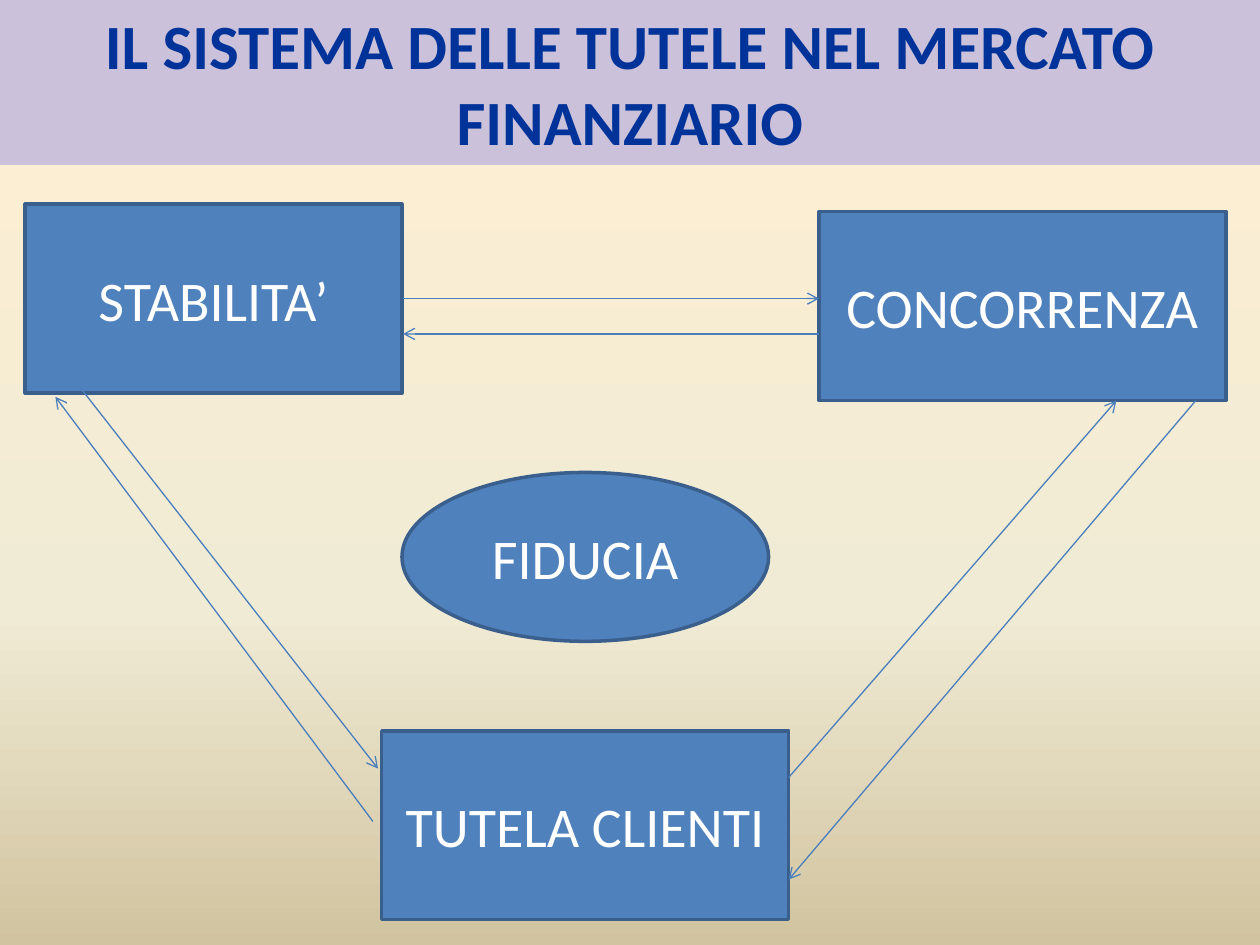
from lxml import etree
from pptx import Presentation
from pptx.dml.color import RGBColor
from pptx.enum.shapes import MSO_CONNECTOR, MSO_SHAPE
from pptx.enum.text import MSO_ANCHOR, PP_ALIGN
from pptx.oxml.ns import qn
from pptx.util import Inches, Pt

RECTANGLE, OVAL = MSO_SHAPE.RECTANGLE, MSO_SHAPE.OVAL
STRAIGHT = MSO_CONNECTOR.STRAIGHT
MIDDLE, CENTER = MSO_ANCHOR.MIDDLE, PP_ALIGN.CENTER

WIDTH, HEIGHT = 10, 7.5
FONT = "Calibri"
BOX_FILL, BOX_LINE, ARROW_COLOR = "4F81BD", "3A5F8C", "4B7EBC"
BACKGROUND = [(0, "FFEFD1"), (65, "F0EBD5"), (100, "D1C39F")]

TITLE = "IL SISTEMA DELLE TUTELE NEL MERCATO FINANZIARIO"
BOX_HEIGHT, WIDE = 1.5, 3.23

# text, shape, (left, top, width, height)
NODES = [
    ("FIDUCIA", OVAL, (3.19, 3.75, 2.91, 1.34)),
    ("STABILITA’", RECTANGLE, (0.2, 1.62, 2.99, BOX_HEIGHT)),
    ("CONCORRENZA", RECTANGLE, (6.5, 1.68, WIDE, BOX_HEIGHT)),
    ("TUTELA CLIENTI", RECTANGLE, (3.03, 5.8, WIDE, BOX_HEIGHT)),
]

# start and end; the head is at the end
ARROWS = [
    ((3.2, 2.37), (6.5, 2.37)),    # stability to competition
    ((6.5, 2.65), (3.2, 2.65)),    # and back
    ((0.64, 3.08), (3, 6.1)),      # stability to client protection
    ((2.96, 6.52), (0.44, 3.15)),  # and back
    ((9.49, 3.18), (6.26, 6.98)),  # competition to client protection
    ((6.26, 6.17), (8.86, 3.18)),  # and back
]


def color(value):
    return RGBColor.from_string(value)


def paint_background(slide):
    fill = slide.background.fill
    fill.gradient()
    fill.gradient_angle = 270  # counter-clockwise: top to bottom
    stops = slide.background._cSld.find(".//" + qn("a:gsLst"))
    for stop in list(stops):
        stops.remove(stop)
    for percent, value in BACKGROUND:
        stop = etree.SubElement(stops, qn("a:gs"), pos=str(percent * 1000))
        etree.SubElement(stop, qn("a:srgbClr"), val=value)


def add_box(slide, text, kind, place, fill, size, text_color, line=None, bold=False):
    box = slide.shapes.add_shape(kind, *map(Inches, place))
    box.shadow.inherit = False
    box.fill.solid()
    box.fill.fore_color.rgb = color(fill)
    if line:
        box.line.color.rgb = color(line)
        box.line.width = Pt(2)
    else:
        box.line.fill.background()
    frame = box.text_frame
    frame.word_wrap = True
    frame.vertical_anchor = MIDDLE
    frame.text = text
    para = frame.paragraphs[0]
    para.alignment = CENTER
    font = para.runs[0].font
    font.name, font.size, font.bold = FONT, Pt(size), bold
    font.color.rgb = color(text_color)


def add_arrow(slide, start, end):
    arrow = slide.shapes.add_connector(STRAIGHT, *map(Inches, start + end))
    arrow.line.color.rgb = color(ARROW_COLOR)
    arrow.line.width = Pt(0.75)
    etree.SubElement(arrow.line._get_or_add_ln(), qn("a:tailEnd"), type="arrow")
    etree.SubElement(arrow._element.spPr, qn("a:effectLst"))


def main():
    deck = Presentation()
    deck.slide_width, deck.slide_height = Inches(WIDTH), Inches(HEIGHT)
    slide = deck.slides.add_slide(deck.slide_layouts[6])
    paint_background(slide)

    # Title band
    add_box(slide, TITLE, RECTANGLE, (0, 0, WIDTH, 1.31), "CCC1DA", 36, "003399", bold=True)

    # Trust in the centre, the three protections around it
    for text, kind, place in NODES:
        add_box(slide, text, kind, place, BOX_FILL, 32, "FFFFFF", BOX_LINE)
    for start, end in ARROWS:
        add_arrow(slide, start, end)

    deck.save("out.pptx")


if __name__ == "__main__":
    main()
